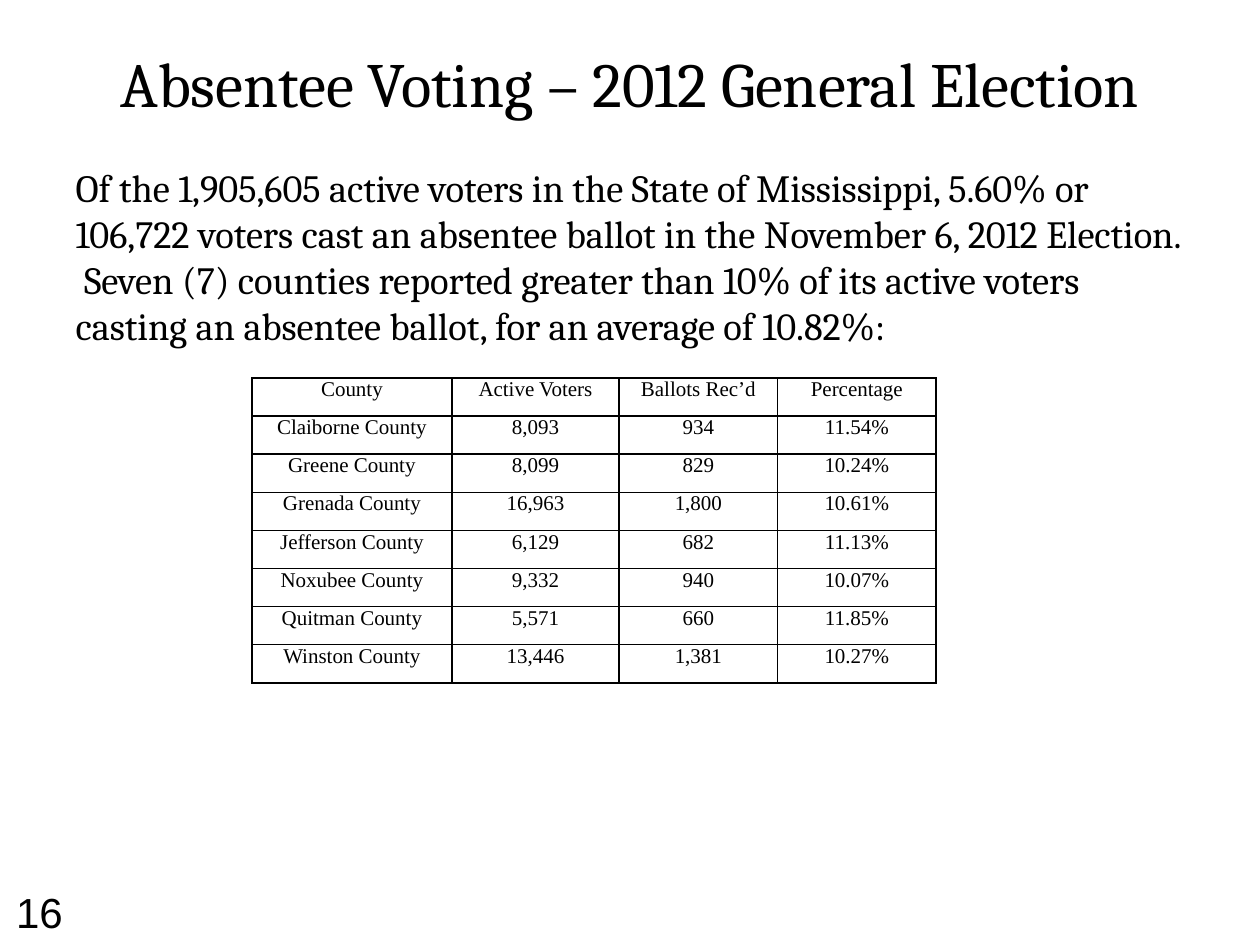
from lxml.etree import SubElement
from pptx import Presentation
from pptx.dml.color import RGBColor
from pptx.enum.text import MSO_ANCHOR, MSO_AUTO_SIZE, PP_ALIGN
from pptx.oxml.ns import qn
from pptx.util import Inches, Pt

COLORS = {"ink": "000000", "page": "FFFFFF"}
HEAD = "Absentee Voting – 2012 General Election"
BODY = (
    "Of the 1,905,605 active voters in the State of Mississippi, 5.60% or "
    "106,722 voters cast an absentee ballot in the November 6, 2012 Election.  "
    "Seven (7) counties reported greater than 10% of its active voters "
    "casting an absentee ballot, for an average of 10.82%:"
)
ROWS = [
    ("County", "Active Voters", "Ballots Rec’d", "Percentage"),
    ("Claiborne County", "8,093", "934", "11.54%"),
    ("Greene County", "8,099", "829", "10.24%"),
    ("Grenada County", "16,963", "1,800", "10.61%"),
    ("Jefferson County", "6,129", "682", "11.13%"),
    ("Noxubee County", "9,332", "940", "10.07%"),
    ("Quitman County", "5,571", "660", "11.85%"),
    ("Winston County", "13,446", "1,381", "10.27%"),
]
COLS = (1.59, 1.33, 1.26, 1.26)


def style(para, font, size, align=PP_ALIGN.LEFT):
    para.alignment = align
    para.font.name = font
    para.font.size = Pt(size)
    para.font.color.rgb = RGBColor.from_string(COLORS["ink"])


def place(shape, box):
    shape.left, shape.top, shape.width, shape.height = map(Inches, box)


def fill_text(shape, box, text):
    """Place a text shape, anchor it at the top and return its paragraph."""
    place(shape, box)
    frame = shape.text_frame
    frame.text = text
    frame.word_wrap = True
    frame.auto_size = MSO_AUTO_SIZE.NONE
    frame.vertical_anchor = MSO_ANCHOR.TOP
    return frame.paragraphs[0]


def add_title(slide, box):
    style(fill_text(slide.shapes.title, box, HEAD), "Cambria", 36, PP_ALIGN.CENTER)


def add_body(slide, box):
    para = fill_text(slide.placeholders[1], box, BODY)
    props = para._p.get_or_add_pPr()
    props.set("marL", "0")
    props.set("indent", "0")
    SubElement(props, qn("a:buNone"))
    para.space_before = Pt(0)
    style(para, "Cambria", 22)


def add_number(slide, box):
    shape = slide.shapes.add_textbox(*map(Inches, box))
    style(fill_text(shape, box, "16"), "Arial", 24)


def rule_cell(cell):
    """Draw a thin line on all four sides of a cell."""
    props = cell._tc.get_or_add_tcPr()
    for side in ("lnL", "lnR", "lnT", "lnB"):
        line = SubElement(props, qn(f"a:{side}"), w=str(Pt(1)))
        paint = SubElement(line, qn("a:solidFill"))
        SubElement(paint, qn("a:srgbClr"), val=COLORS["ink"])


def add_grid(slide, box):
    table = slide.shapes.add_table(len(ROWS), len(COLS), *map(Inches, box)).table
    table.first_row = table.horz_banding = False
    for col, share in zip(table.columns, COLS):
        col.width = Inches(box[2] * share / sum(COLS))
    for row, texts in zip(table.rows, ROWS):
        row.height = Inches(box[3] / len(ROWS))
        for cell, text in zip(row.cells, texts):
            cell.text = text
            cell.margin_left = cell.margin_right = Inches(0.07)
            cell.margin_top = cell.margin_bottom = 0
            rule_cell(cell)
            cell.fill.background()
            style(cell.text_frame.paragraphs[0], "Times New Roman", 12, PP_ALIGN.CENTER)


def main():
    deck = Presentation()
    deck.slide_width, deck.slide_height = Inches(10), Inches(7.5)
    slide = deck.slides.add_slide(deck.slide_layouts[1])
    slide.background.fill.solid()
    slide.background.fill.fore_color.rgb = RGBColor.from_string(COLORS["page"])
    add_number(slide, (0.03, 6.99, 1, 0.5))
    add_title(slide, (0.5, 0.3, 9, 1.25))
    add_body(slide, (0.5, 1.25, 9, 5.45))
    add_grid(slide, (2, 3, 5.43, 2.42))
    deck.save("out.pptx")


if __name__ == "__main__":
    main()
